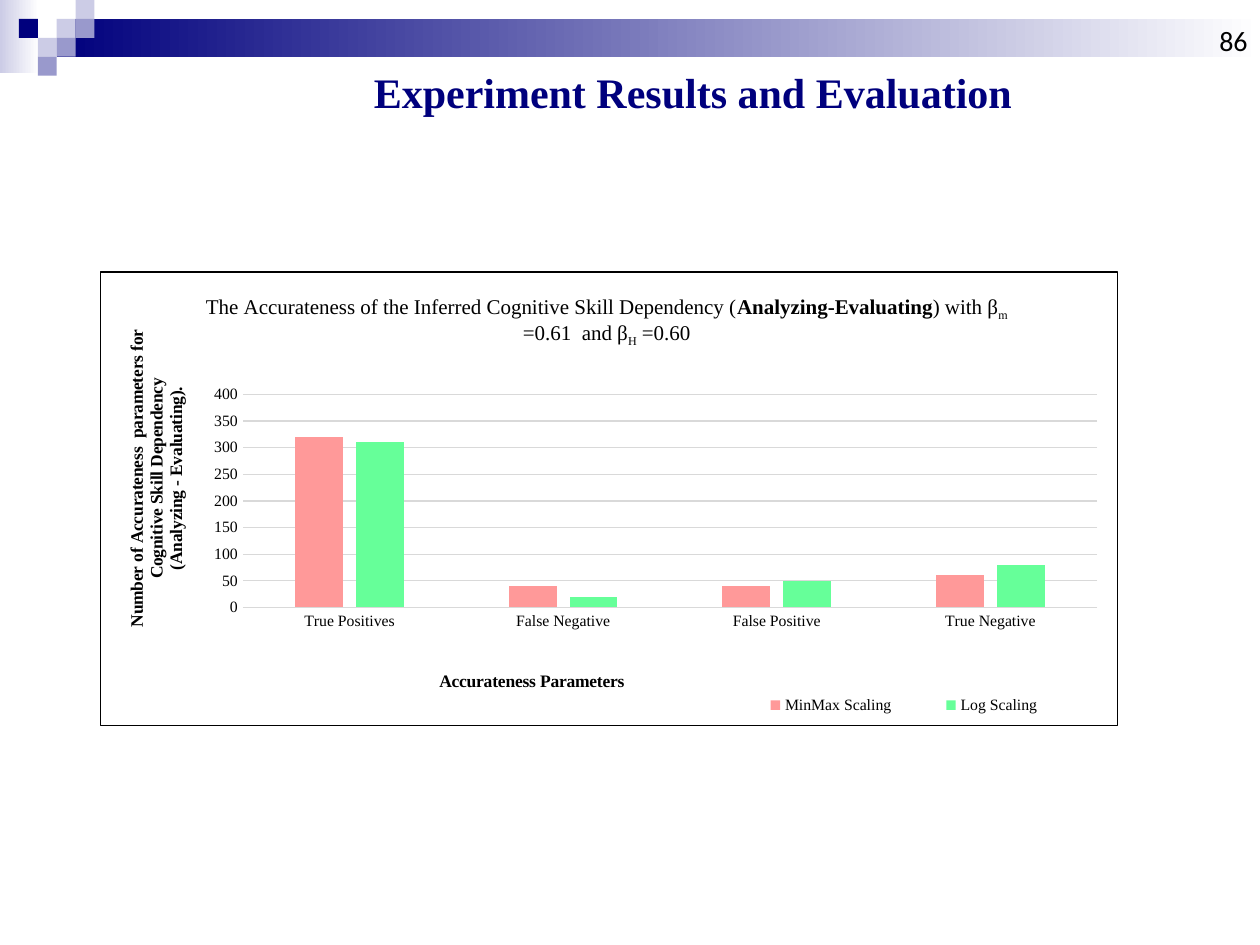
from lxml import etree
from pptx import Presentation
from pptx.chart.data import CategoryChartData
from pptx.dml.color import RGBColor
from pptx.enum.chart import XL_CHART_TYPE as ChartType, XL_LEGEND_POSITION as LegendPosition
from pptx.enum.chart import XL_TICK_MARK as TickMark
from pptx.enum.shapes import MSO_SHAPE as Shape
from pptx.enum.text import MSO_ANCHOR as Anchor, PP_ALIGN as Align
from pptx.oxml import parse_xml
from pptx.oxml.ns import nsdecls, qn
from pptx.util import Pt

SERIF = "Times New Roman"
NAVY, LILAC, VIOLET = "00007D", "CCCCE6", "9999CC"
BLACK, WHITE, GRID = "000000", "FFFFFF", "D9D9D9"


def color(value):
    """Turn a hex string into a colour."""
    return RGBColor.from_string(value)


def style_font(font, size, name=SERIF, tint=BLACK, bold=False):
    """Set the face, size, colour and weight of a font."""
    font.name, font.size, font.bold = name, Pt(size), bold
    font.color.rgb = color(tint)


def add_block(page, box, tint, fade=False):
    """Add a rectangle, plain or fading to white."""
    block = page.shapes.add_shape(Shape.RECTANGLE, *map(Pt, box))
    block.shadow.inherit = False
    block.line.fill.background()
    if fade:
        block.fill.gradient()
        block.fill.gradient_angle = 0
        for stop, stop_tint, position in zip(block.fill.gradient_stops, (tint, WHITE), (0, 1)):
            stop.color.rgb = color(stop_tint)
            stop.position = position
    else:
        block.fill.solid()
        block.fill.fore_color.rgb = color(tint)


def add_banner(page, box):
    """Draw the fading bar and its checkered corner."""
    left, top, width, height = box
    side = 10.8
    add_block(page, (left, top, 22.3, height), LILAC, fade=True)
    add_block(page, (left + 3 * side, top + side, width - 3 * side, 2 * side), NAVY, fade=True)
    tiles = [(3, 1, LILAC), (4, 0, LILAC), (4, 1, VIOLET), (2, 2, LILAC),
             (1, 1, NAVY), (3, 2, VIOLET), (2, 3, VIOLET)]
    for column, row, tint in tiles:
        add_block(page, (left + column * side, top + row * side, side, side), tint)


def add_heading(page, box, text):
    """Place and format the slide title."""
    heading = page.shapes.title
    heading.left, heading.top, heading.width, heading.height = map(Pt, box)
    frame = heading.text_frame
    frame.text = text
    frame.vertical_anchor = Anchor.MIDDLE
    para = frame.paragraphs[0]
    para.alignment = Align.CENTER
    para.line_spacing = 0.93
    style_font(para.runs[0].font, 24, tint=NAVY, bold=True)


def add_page_number(page, box, text):
    """Write the page number at the right edge."""
    frame = page.shapes.add_textbox(*map(Pt, box)).text_frame
    frame.word_wrap = True
    frame.vertical_anchor = Anchor.BOTTOM
    para = frame.paragraphs[0]
    para.text = text
    para.alignment = Align.RIGHT
    style_font(para.runs[0].font, 16, name="Calibri")


def set_layout(element, index, inner=False, **fractions):
    """Fix the position of a chart part by fractions of the chart."""
    for old in element.findall(qn("c:layout")):
        element.remove(old)
    layout = parse_xml(f"<c:layout {nsdecls('c')}/>")
    manual = etree.SubElement(layout, qn("c:manualLayout"))
    if inner:
        etree.SubElement(manual, qn("c:layoutTarget"), val="inner")
    for key in ("x", "y"):
        etree.SubElement(manual, qn(f"c:{key}Mode"), val="edge")
    for key, value in fractions.items():
        etree.SubElement(manual, qn(f"c:{key}"), val=str(value))
    element.insert(index, layout)


def write_chart_title(chart):
    """Write the chart title with its bold part and subscripts."""
    chart.has_title = True
    para = chart.chart_title.text_frame.paragraphs[0]
    parts = [("The Accurateness of the Inferred Cognitive Skill Dependency (", False, False),
             ("Analyzing-Evaluating", True, False), (") with β", False, False),
             ("m", False, True), (" =0.61  and β", False, False),
             ("H", False, True), (" =0.60", False, False)]
    for text, bold, subscript in parts:
        span = para.add_run()
        span.text = text
        style_font(span.font, 12, bold=bold)
        if subscript:
            span.font._element.set("baseline", "-25000")
    set_layout(chart.chart_title._element, 1, x=0.1, y=0.04)


def style_axis(axis, lines, x, y):
    """Format the labels of an axis and write its title."""
    axis.major_tick_mark = axis.minor_tick_mark = TickMark.NONE
    style_font(axis.tick_labels.font, 9)
    frame = axis.axis_title.text_frame
    frame.text = "\n".join(lines)
    for para in frame.paragraphs:
        style_font(para.runs[0].font, 10, bold=True)
    set_layout(axis.axis_title._element, 1, x=x, y=y)


def add_results_chart(page, box):
    """Add the column chart of both scalings."""
    data = CategoryChartData()
    data.categories = ["True Positives", "False Negative", "False Positive", "True Negative"]
    data.add_series("MinMax Scaling", (320, 40, 40, 60))
    data.add_series("Log Scaling", (310, 20, 50, 80))
    chart = page.shapes.add_chart(ChartType.COLUMN_CLUSTERED, *map(Pt, box), data).chart
    style_font(chart.font, 10)
    border = parse_xml(
        f'<c:spPr {nsdecls("c", "a")}><a:solidFill><a:srgbClr val="{WHITE}"/></a:solidFill>'
        f'<a:ln w="{Pt(0.75)}"><a:solidFill><a:srgbClr val="{BLACK}"/></a:solidFill></a:ln></c:spPr>')
    chart_part = chart._chartSpace.find(qn("c:chart"))
    chart_part.addnext(border)
    write_chart_title(chart)

    plot = chart.plots[0]
    plot.gap_width, plot.overlap, plot.vary_by_categories = 219, -27, False
    for series, tint in zip(plot.series, ("FF9999", "66FF99")):
        series.format.fill.solid()
        series.format.fill.fore_color.rgb = color(tint)
    set_layout(chart_part.find(qn("c:plotArea")), 0, inner=True, x=0.14, y=0.27, w=0.84, h=0.47)

    categories, values = chart.category_axis, chart.value_axis
    style_axis(categories, ["Accurateness Parameters"], 0.33, 0.87)
    style_axis(values, ["Number of Accurateness  parameters for Cognitive Skill Dependency",
                        "(Analyzing - Evaluating)."], 0.02, 0.12)
    values.minimum_scale, values.maximum_scale, values.major_unit = 0, 400, 50
    values.format.line.fill.background()
    for line in (categories.format.line, values.major_gridlines.format.line):
        line.color.rgb = color(GRID)
        line.width = Pt(0.75)

    chart.has_legend = True
    chart.legend.position = LegendPosition.BOTTOM
    chart.legend.include_in_layout = False
    style_font(chart.legend.font, 9)
    set_layout(chart.legend._element, 1, x=0.61, y=0.92, w=0.36, h=0.07)


def main():
    """Build the slide and save it."""
    deck = Presentation()
    deck.slide_width, deck.slide_height = Pt(720), Pt(540)
    page = deck.slides.add_slide(deck.slide_layouts[5])
    add_banner(page, (0, 0, 720, 42))
    add_results_chart(page, (57, 155, 582, 260))
    add_page_number(page, (552, 0, 168, 36), "86")
    add_heading(page, (109, 36, 574, 36), "Experiment Results and Evaluation")
    deck.save("out.pptx")


if __name__ == "__main__":
    main()
